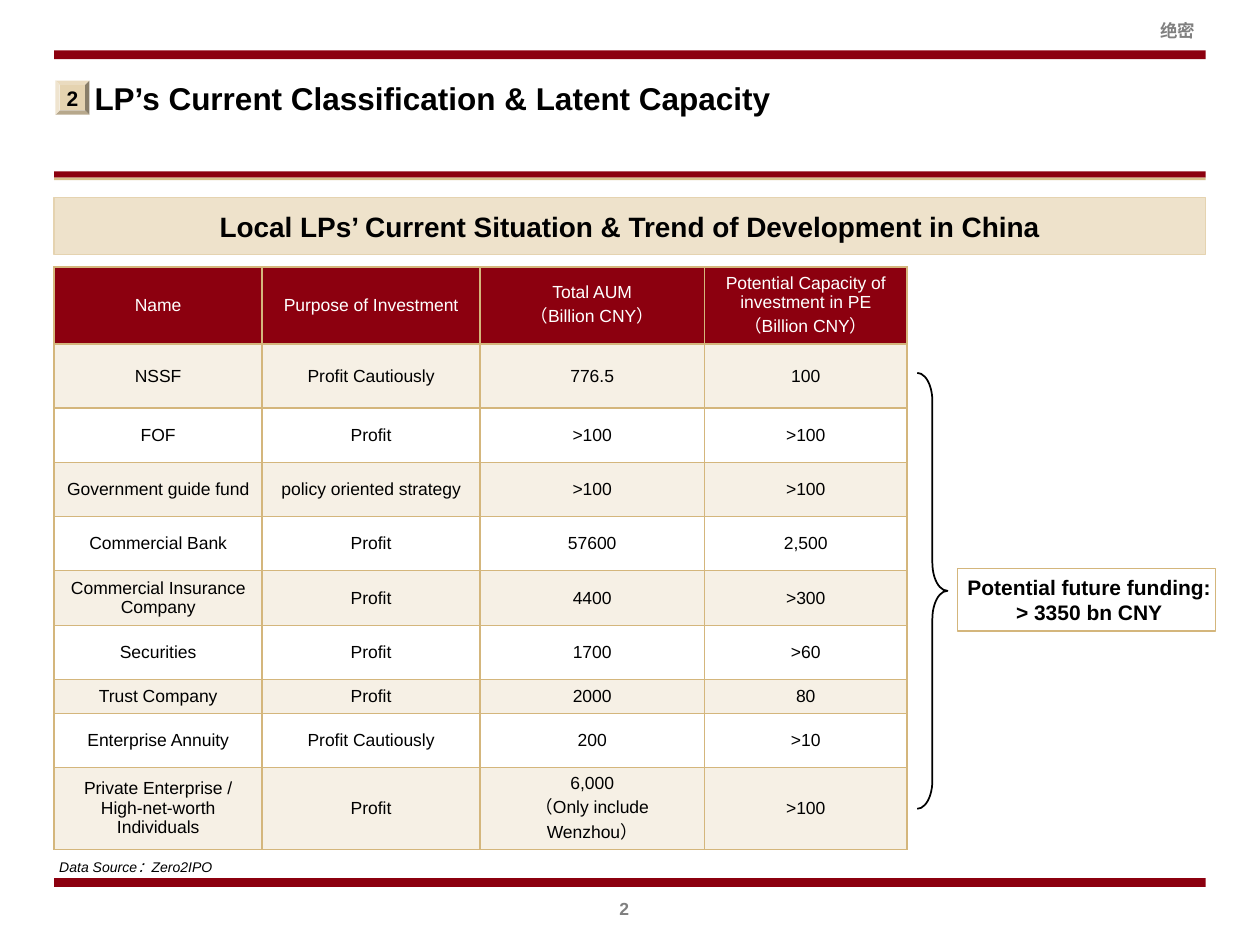
from lxml import etree
from pptx import Presentation
from pptx.dml.color import RGBColor
from pptx.enum.shapes import MSO_SHAPE
from pptx.enum.text import MSO_ANCHOR, PP_ALIGN
from pptx.oxml.ns import qn
from pptx.util import Inches, Pt

COLORS = {
    "red": "8C000F", "gold": "D7BF8B", "border": "D4B67C", "tan": "E5D3B0",
    "banner": "EEE2CB", "band": "F6F0E5", "white": "FFFFFF",
    "black": "000000", "gray": "808080",
}

# Content
TITLE = "LP’s Current Classification & Latent Capacity"
BANNER = "Local LPs’ Current Situation & Trend of Development in China"
FUNDING = "Potential future funding:\n> 3350 bn CNY"
SOURCE = "Data Source：Zero2IPO"
ROWS = [
    ("Name", "Purpose of Investment", "Total AUM\n（Billion CNY）",
     "Potential Capacity of investment in PE\n（Billion CNY）"),
    ("NSSF", "Profit Cautiously", "776.5", "100"),
    ("FOF", "Profit", ">100", ">100"),
    ("Government guide fund", "policy oriented strategy", ">100", ">100"),
    ("Commercial Bank", "Profit", "57600", "2,500"),
    ("Commercial Insurance Company", "Profit", "4400", ">300"),
    ("Securities", "Profit", "1700", ">60"),
    ("Trust Company", "Profit", "2000", "80"),
    ("Enterprise Annuity", "Profit Cautiously", "200", ">10"),
    ("Private Enterprise /\nHigh-net-worth Individuals", "Profit",
     "6,000\n（Only include Wenzhou）", ">100"),
]
COLUMN_WIDTHS = [1.65, 1.73, 1.78, 1.61]
ROW_HEIGHTS = [0.61, 0.51] + [0.43] * 5 + [0.26, 0.43, 0.65]

LEFT, WIDTH = 0.43, 9.14
RULES = [  # top, height, colour
    (6.97, 0.07, "red"), (0.4, 0.07, "red"),
    (1.36, 0.05, "red"), (1.41, 0.02, "gold"),
]


def rgb(name):
    return RGBColor.from_string(COLORS[name])


def write(frame, text, size, color="black", bold=False, italic=False,
          align=PP_ALIGN.CENTER):
    frame.text = text
    for paragraph in frame.paragraphs:
        paragraph.alignment = align
        for run in paragraph.runs:
            font = run.font
            font.name, font.size = "Arial", Pt(size)
            font.bold, font.italic = bold, italic
            font.color.rgb = rgb(color)


def set_frame(frame, margins, anchor, wrap=True):
    frame.word_wrap = wrap
    frame.vertical_anchor = anchor
    (frame.margin_left, frame.margin_top,
     frame.margin_right, frame.margin_bottom) = map(Inches, margins)


def add_shape(slide, kind, box, fill=None, line=None, line_width=0.75):
    shape = slide.shapes.add_shape(kind, *map(Inches, box))
    shape.shadow.inherit = False
    if fill:
        shape.fill.solid()
        shape.fill.fore_color.rgb = rgb(fill)
    else:
        shape.fill.background()
    if line:
        shape.line.color.rgb = rgb(line)
        shape.line.width = Pt(line_width)
    else:
        shape.line.fill.background()
    return shape


def add_text(slide, box, text, size, margins=(0, 0, 0, 0),
             anchor=MSO_ANCHOR.TOP, wrap=True, **style):
    frame = slide.shapes.add_textbox(*map(Inches, box)).text_frame
    set_frame(frame, margins, anchor, wrap)
    write(frame, text, size, **style)


def set_borders(cell):
    properties = cell._tc.get_or_add_tcPr()
    for index, side in enumerate(("lnL", "lnR", "lnT", "lnB")):
        line = etree.Element(qn(f"a:{side}"), w=str(Pt(1)))
        fill = etree.SubElement(line, qn("a:solidFill"))
        etree.SubElement(fill, qn("a:srgbClr"), val=COLORS["border"])
        properties.insert(index, line)


def add_fund_table(slide):
    table = slide.shapes.add_table(
        len(ROWS), len(COLUMN_WIDTHS), Inches(LEFT), Inches(2.12),
        Inches(sum(COLUMN_WIDTHS)), Inches(sum(ROW_HEIGHTS))).table
    for column, width in zip(table.columns, COLUMN_WIDTHS):
        column.width = Inches(width)
    for row, height in zip(table.rows, ROW_HEIGHTS):
        row.height = Inches(height)
    for row_index, texts in enumerate(ROWS):
        header = row_index == 0
        fill = "red" if header else "band" if row_index % 2 else "white"
        for column_index, text in enumerate(texts):
            cell = table.cell(row_index, column_index)
            cell.vertical_anchor = MSO_ANCHOR.MIDDLE
            cell.fill.solid()
            cell.fill.fore_color.rgb = rgb(fill)
            write(cell.text_frame, text, 10, "white" if header else "black")
            set_borders(cell)


def main():
    presentation = Presentation()
    presentation.slide_width, presentation.slide_height = Inches(10), Inches(7.5)
    slide = presentation.slides.add_slide(presentation.slide_layouts[6])

    # Rules, confidentiality mark and page number
    for top, height, color in RULES:
        add_shape(slide, MSO_SHAPE.RECTANGLE, (LEFT, top, WIDTH, height), color)
    add_text(slide, (9.21, 0.16, 0.28, 0.17), "绝密", 10, wrap=False,
             color="gray", bold=True, align=PP_ALIGN.LEFT)
    add_text(slide, (4.75, 7.11, 0.41, 0.27), "2", 10, (0, 0.02, 0, 0.05),
             color="gray", bold=True)

    # Title with numbered badge
    add_text(slide, (0.75, 0.61, 8.82, 0.38), TITLE, 18, (0, 0.02, 0, 0.02),
             bold=True, align=PP_ALIGN.LEFT)
    badge = add_shape(slide, MSO_SHAPE.BEVEL, (0.44, 0.64, 0.27, 0.27), "tan")
    set_frame(badge.text_frame, (0, 0.05, 0, 0.05), MSO_ANCHOR.MIDDLE)
    write(badge.text_frame, "2", 12, bold=True)

    # Banner and table
    banner = add_shape(slide, MSO_SHAPE.RECTANGLE, (LEFT, 1.57, WIDTH, 0.45),
                       "banner", "tan")
    set_frame(banner.text_frame, (0.1, 0.05, 0.1, 0.05), MSO_ANCHOR.MIDDLE)
    write(banner.text_frame, BANNER, 16, bold=True)
    add_fund_table(slide)

    # Brace and funding total
    brace = add_shape(slide, MSO_SHAPE.RIGHT_BRACE, (7.28, 2.96, 0.24, 3.46),
                      line="black", line_width=1)
    brace.adjustments[0], brace.adjustments[1] = 0.93, 0.5
    funding = add_shape(slide, MSO_SHAPE.RECTANGLE, (7.6, 4.51, 2.05, 0.5),
                        line="border")
    set_frame(funding.text_frame, (0.04, 0.05, 0, 0.05), MSO_ANCHOR.TOP)
    write(funding.text_frame, FUNDING, 12, bold=True)

    # Data source
    add_text(slide, (LEFT, 6.52, 4.41, 0.47), SOURCE, 8, (0.04,) * 4,
             MSO_ANCHOR.BOTTOM, italic=True, align=PP_ALIGN.LEFT)

    presentation.save("out.pptx")


if __name__ == "__main__":
    main()
